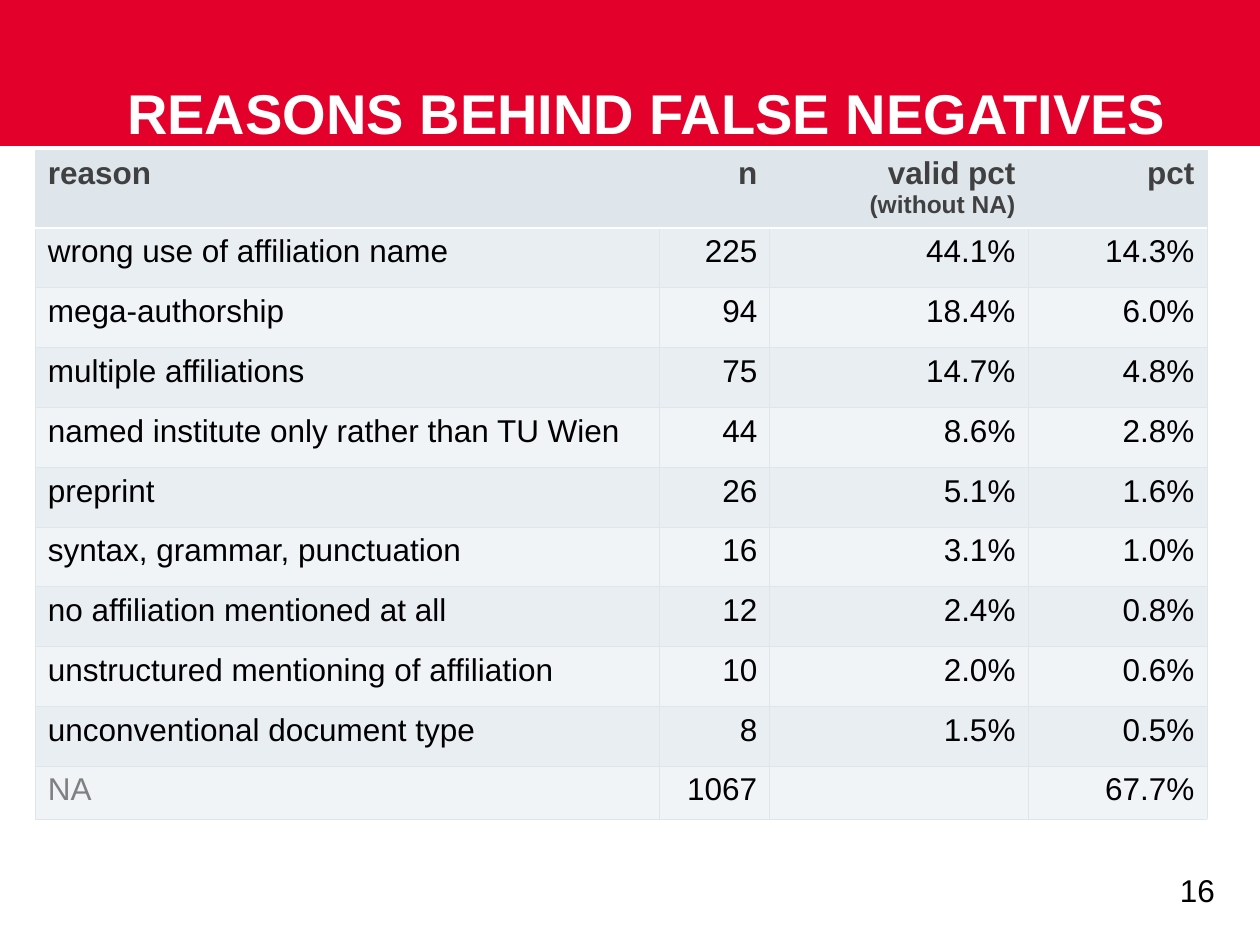
from lxml import etree
from pptx import Presentation
from pptx import util as u
from pptx.dml.color import RGBColor
from pptx.enum import shapes, text
from pptx.oxml.ns import qn

RED, WHITE, BLACK = "E3002B", "FFFFFF", "000000"
HEAD, ODD, EVEN = "DEE6EC", "E9EEF2", "F1F4F7"
DARK, GREY = "404040", "808080"

COLS = [4.95, 0.88, 2.05, 1.42]
TOP, LAST, HIGH = 0.62, 0.42, 5.31
ROWS = [
    ("reason", "n", "valid pct\n(without NA)", "pct"),
    ("wrong use of affiliation name", "225", "44.1%", "14.3%"),
    ("mega-authorship", "94", "18.4%", "6.0%"),
    ("multiple affiliations", "75", "14.7%", "4.8%"),
    ("named institute only rather than TU Wien", "44", "8.6%", "2.8%"),
    ("preprint", "26", "5.1%", "1.6%"),
    ("syntax, grammar, punctuation", "16", "3.1%", "1.0%"),
    ("no affiliation mentioned at all", "12", "2.4%", "0.8%"),
    ("unstructured mentioning of affiliation", "10", "2.0%", "0.6%"),
    ("unconventional document type", "8", "1.5%", "0.5%"),
    ("NA", "1067", "", "67.7%"),
]


def paint(obj, color):
    obj.solid()
    obj.fore_color.rgb = RGBColor.from_string(color)


def style(par, size, color, bold=False, align=text.PP_ALIGN.LEFT):
    par.alignment = align
    for font in [par.font] + [run.font for run in par.runs]:
        font.name = "Arial"
        font.size = u.Pt(size)
        font.bold = bold
        font.color.rgb = RGBColor.from_string(color)


def add_panel(slide, top, height, color):
    panel = slide.shapes.add_shape(
        shapes.MSO_SHAPE.RECTANGLE,
        0, u.Inches(top), u.Inches(10), u.Inches(height))
    panel.shadow.inherit = False
    paint(panel.fill, color)
    panel.line.fill.background()


def add_text(slide, words, area):
    box = slide.shapes.add_textbox(*[u.Inches(v) for v in area])
    frame = box.text_frame
    frame.word_wrap = True
    frame.text = words
    return frame


def add_title(slide, words):
    frame = add_text(slide, words, (1.01, 0.27, 8.73, 0.89))
    frame.margin_left = frame.margin_right = 0
    frame.margin_top = frame.margin_bottom = 0
    frame.vertical_anchor = text.MSO_ANCHOR.BOTTOM
    par = frame.paragraphs[0]
    par.line_spacing = u.Pt(32)
    style(par, 32, WHITE, True)


def add_number(slide, words):
    frame = add_text(slide, words, (8.58, 6.86, 1.16, 0.65))
    style(frame.paragraphs[0], 18, BLACK, align=text.PP_ALIGN.RIGHT)


def add_edge(cell, side, color, width):
    props = cell._tc.get_or_add_tcPr()
    line = etree.SubElement(props, qn("a:ln" + side), w=str(u.Pt(width)))
    fill = etree.SubElement(line, qn("a:solidFill"))
    etree.SubElement(fill, qn("a:srgbClr"), val=color)


def fill_cell(cell, words, row, col):
    white = {"B": row == 0, "T": row == 1}
    for side in "LRTB":
        edge = (WHITE, 1) if white.get(side) else (HEAD, 0.5)
        add_edge(cell, side, *edge)
    paint(cell.fill, HEAD if row == 0 else ODD if row % 2 else EVEN)
    if row == 0:
        cell.margin_bottom = u.Inches(0.03)
    cell.text_frame.text = words
    color = DARK if row == 0 else GREY if words == "NA" else BLACK
    align = text.PP_ALIGN.RIGHT if col else text.PP_ALIGN.LEFT
    for k, par in enumerate(cell.text_frame.paragraphs):
        style(par, 14 if k else 18, color, row == 0, align)


def add_grid(slide):
    grid = slide.shapes.add_table(
        len(ROWS), len(COLS), u.Inches(0.28), u.Inches(1.19),
        u.Inches(sum(COLS)), u.Inches(HIGH)).table
    grid.horz_banding = False
    grid.first_row = True
    for col, width in zip(grid.columns, COLS):
        col.width = u.Inches(width)
    count = len(ROWS) - 2
    step = (HIGH - TOP - LAST) / count
    for row, height in zip(grid.rows, [TOP] + [step] * count + [LAST]):
        row.height = u.Inches(height)
    for r, row in enumerate(ROWS):
        for c, words in enumerate(row):
            fill_cell(grid.cell(r, c), words, r, c)


def main():
    deck = Presentation()
    deck.slide_width, deck.slide_height = u.Inches(10), u.Inches(7.5)
    slide = deck.slides.add_slide(deck.slide_layouts[6])
    add_panel(slide, 0, 6.23, RED)
    add_panel(slide, 1.16, 5.28, WHITE)
    add_title(slide, "REASONS BEHIND FALSE NEGATIVES")
    add_number(slide, "16")
    add_grid(slide)
    deck.save("out.pptx")


if __name__ == "__main__":
    main()
